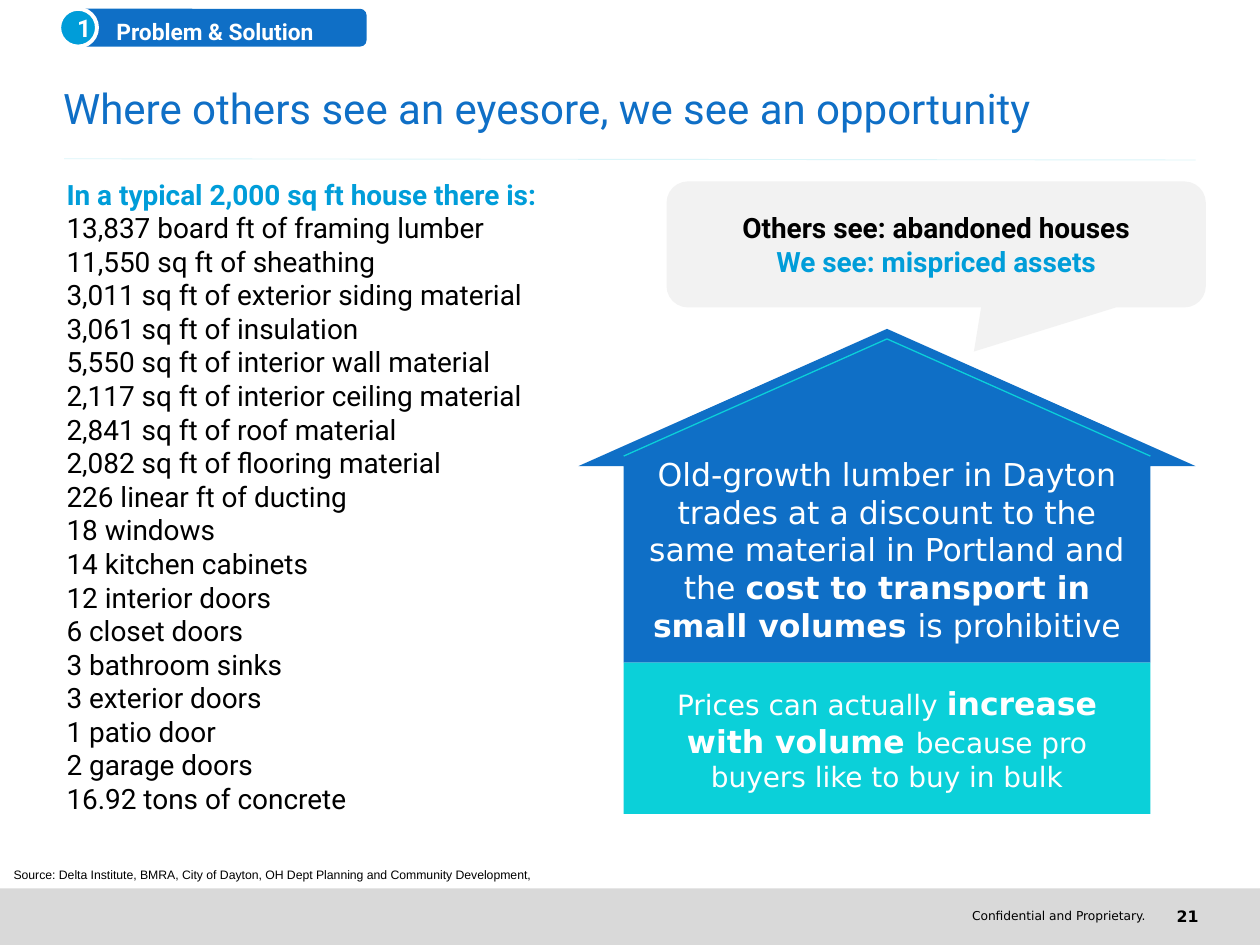
from dataclasses import dataclass

from lxml.etree import SubElement
from pptx import Presentation
from pptx.dml.color import RGBColor
from pptx.enum.shapes import MSO_CONNECTOR, MSO_SHAPE
from pptx.enum.text import MSO_ANCHOR, PP_ALIGN
from pptx.oxml.ns import qn
from pptx.util import Inches, Pt


@dataclass(frozen=True)
class Theme:
    blue: str = "0F6FC6"
    sky: str = "009DD9"
    teal: str = "0BD0D9"
    pale: str = "DBF5F9"
    bubble: str = "F2F2F2"
    footer: str = "D9D9D9"
    black: str = "000000"
    white: str = "FFFFFF"
    heading_font: str = "Roboto"
    body_font: str = "DejaVu Sans"
    source_font: str = "Arial"
    title: int = 24
    emphasis: int = 18
    body: int = 16
    number: int = 14
    badge: int = 13
    page_number: int = 9
    small: int = 7


THEME = Theme()


@dataclass(frozen=True)
class Span:
    text: str
    size: int
    color: str = THEME.black
    bold: bool = False
    font: str = THEME.heading_font


@dataclass(frozen=True)
class Frame:
    left: float
    top: float
    width: float
    height: float


@dataclass(frozen=True)
class TextStyle:
    align: PP_ALIGN = PP_ALIGN.LEFT
    anchor: MSO_ANCHOR = MSO_ANCHOR.TOP
    insets: tuple[float, float, float, float] = (0.1, 0.05, 0.1, 0.05)
    wrap: bool = True


CENTERED = TextStyle(PP_ALIGN.CENTER, MSO_ANCHOR.MIDDLE)
NO_INSETS = (0, 0, 0, 0)

MATERIALS = (
    "13,837 board ft of framing lumber",
    "11,550 sq ft of sheathing",
    "3,011 sq ft of exterior siding material",
    "3,061 sq ft of insulation",
    "5,550 sq ft of interior wall material",
    "2,117 sq ft of interior ceiling material",
    "2,841 sq ft of roof material",
    "2,082 sq ft of flooring material",
    "226 linear ft of ducting",
    "18 windows",
    "14 kitchen cabinets",
    "12 interior doors",
    "6 closet doors",
    "3 bathroom sinks",
    "3 exterior doors",
    "1 patio door",
    "2 garage doors",
    "16.92 tons of concrete",
)

# House outline
PEAK_X, PEAK_Y = 7.04, 2.61
EAVE_LEFT, EAVE_RIGHT, EAVE_Y = 4.59, 9.49, 3.7
WALL_LEFT, WALL_RIGHT = 4.95, 9.13
FLOOR_Y, GROUND_Y = 5.26, 6.46


def write(shape, paragraphs: list[list[Span]], style: TextStyle) -> None:
    frame = shape.text_frame
    frame.word_wrap = style.wrap
    frame.vertical_anchor = style.anchor
    (frame.margin_left, frame.margin_top,
     frame.margin_right, frame.margin_bottom) = map(Inches, style.insets)
    for index, spans in enumerate(paragraphs):
        para = frame.add_paragraph() if index else frame.paragraphs[0]
        para.alignment = style.align
        for span in spans:
            run = para.add_run()
            run.text = span.text
            run.font.name = span.font
            run.font.size = Pt(span.size)
            run.font.bold = span.bold
            run.font.color.rgb = RGBColor.from_string(span.color)


def add_text(page, at: Frame, paragraphs: list[list[Span]], style: TextStyle = TextStyle()) -> None:
    box = page.shapes.add_textbox(*map(Inches, (at.left, at.top, at.width, at.height)))
    write(box, paragraphs, style)


def paint(shape, fill: str) -> None:
    """Give a flat fill with no outline or shadow."""
    shape.shadow.inherit = False
    shape.fill.solid()
    shape.fill.fore_color.rgb = RGBColor.from_string(fill)
    shape.line.fill.background()


def add_block(page, kind: MSO_SHAPE, at: Frame, fill: str, adjustments: tuple[float, ...] = ()):
    block = page.shapes.add_shape(kind, *map(Inches, (at.left, at.top, at.width, at.height)))
    paint(block, fill)
    for index, value in enumerate(adjustments):
        block.adjustments[index] = value
    return block


def add_line(page, start: tuple[float, float], end: tuple[float, float], color: str, weight: float) -> None:
    line = page.shapes.add_connector(MSO_CONNECTOR.STRAIGHT, *map(Inches, start + end))
    line.line.color.rgb = RGBColor.from_string(color)
    line.line.width = Pt(weight)
    SubElement(line._element.spPr, qn("a:effectLst"))


def draw_footer(page) -> None:
    add_block(page, MSO_SHAPE.RECTANGLE, Frame(0, 7.05, 10, 0.45), THEME.footer)
    add_text(page, Frame(4.05, 7.16, 5.14, 0.22),
             [[Span("Confidential and Proprietary.", THEME.small, font=THEME.body_font)]],
             TextStyle(PP_ALIGN.RIGHT, insets=(0, 0.05, 0.1, 0.05)))
    add_text(page, Frame(8.99, 7.15, 0.62, 0.4),
             [[Span("21", THEME.page_number, bold=True, font=THEME.body_font)]],
             TextStyle(PP_ALIGN.RIGHT))


def draw_header(page) -> None:
    add_line(page, (0.51, 1.26), (9.49, 1.27), THEME.pale, 0.5)
    add_text(page, Frame(0.5, 0.51, 8.99, 0.69),
             [[Span("Where others see an eyesore, we see an opportunity", THEME.title, THEME.blue)]],
             TextStyle(anchor=MSO_ANCHOR.MIDDLE, insets=NO_INSETS))
    badge = add_block(page, MSO_SHAPE.ROUNDED_RECTANGLE, Frame(0.61, 0.07, 2.3, 0.3), THEME.blue, (0.17,))
    write(badge, [[Span("Problem & Solution", THEME.badge, THEME.white, True)]],
          TextStyle(anchor=MSO_ANCHOR.BOTTOM, insets=(0.3, 0, 0.1, 0)))
    number = add_block(page, MSO_SHAPE.OVAL, Frame(0.47, 0.07, 0.3, 0.3), THEME.sky)
    number.line.color.rgb = RGBColor.from_string(THEME.white)
    number.line.width = Pt(2.25)
    write(number, [[Span("1", THEME.number, THEME.white, True)]], CENTERED)


def draw_materials(page) -> None:
    add_text(page, Frame(0.01, 6.83, 4.37, 0.22),
             [[Span("Source: Delta Institute, BMRA, City of Dayton, OH Dept Planning and Community Development,",
                    THEME.small, font=THEME.source_font)]],
             TextStyle(wrap=False))
    heading = Span("In a typical 2,000 sq ft house there is:", THEME.body, THEME.sky, True)
    add_text(page, Frame(0.43, 1.3, 4.37, 5.17),
             [[heading]] + [[Span(item, THEME.body)] for item in MATERIALS],
             TextStyle(anchor=MSO_ANCHOR.BOTTOM, insets=(0.1, 0, 0.1, 0)))


def house_span(text: str, size: int, bold: bool = False) -> Span:
    return Span(text, size, THEME.white, bold, THEME.body_font)


def draw_house(page) -> None:
    builder = page.shapes.build_freeform(Inches(PEAK_X), Inches(PEAK_Y))
    corners = ((EAVE_RIGHT, EAVE_Y), (WALL_RIGHT, EAVE_Y), (WALL_RIGHT, FLOOR_Y),
               (WALL_LEFT, FLOOR_Y), (WALL_LEFT, EAVE_Y), (EAVE_LEFT, EAVE_Y))
    builder.add_line_segments([(Inches(x), Inches(y)) for x, y in corners], close=True)
    house = builder.convert_to_shape()
    paint(house, THEME.blue)
    write(house, [[
        house_span("Old-growth lumber in Dayton trades at a discount to the same material in Portland and the ",
                   THEME.emphasis),
        house_span("cost to transport in small volumes ", THEME.emphasis, True),
        house_span("is prohibitive", THEME.emphasis),
    ]], TextStyle(PP_ALIGN.CENTER, MSO_ANCHOR.MIDDLE, (0.5, 0.9, 0.5, 0.05)))

    base = add_block(page, MSO_SHAPE.RECTANGLE,
                     Frame(WALL_LEFT, FLOOR_Y, WALL_RIGHT - WALL_LEFT, GROUND_Y - FLOOR_Y), THEME.teal)
    write(base, [[
        house_span("Prices can actually ", THEME.body),
        house_span("increase", THEME.emphasis, True),
        house_span(" ", THEME.body),
        house_span("with volume ", THEME.emphasis, True),
        house_span("because pro buyers like to buy in bulk", THEME.body),
    ]], CENTERED)

    callout = add_block(page, MSO_SHAPE.ROUNDED_RECTANGULAR_CALLOUT, Frame(5.29, 1.44, 4.28, 1),
                        THEME.bubble, (0.07, 0.85, 0.17))
    write(callout, [
        [Span("Others see: abandoned houses", THEME.body, bold=True)],
        [Span("We see: mispriced assets", THEME.body, THEME.sky, True)],
    ], TextStyle(PP_ALIGN.CENTER, MSO_ANCHOR.MIDDLE, NO_INSETS))

    ridge = (PEAK_X, PEAK_Y + 0.08)
    roof_foot = EAVE_Y - 0.08
    add_line(page, (WALL_LEFT, roof_foot), ridge, THEME.teal, 0.75)
    add_line(page, ridge, (WALL_RIGHT, roof_foot), THEME.teal, 0.75)


def main() -> None:
    deck = Presentation()
    deck.slide_width, deck.slide_height = Inches(10), Inches(7.5)
    page = deck.slides.add_slide(deck.slide_layouts[6])
    draw_footer(page)
    draw_header(page)
    draw_materials(page)
    draw_house(page)
    deck.save("out.pptx")


if __name__ == "__main__":
    main()
